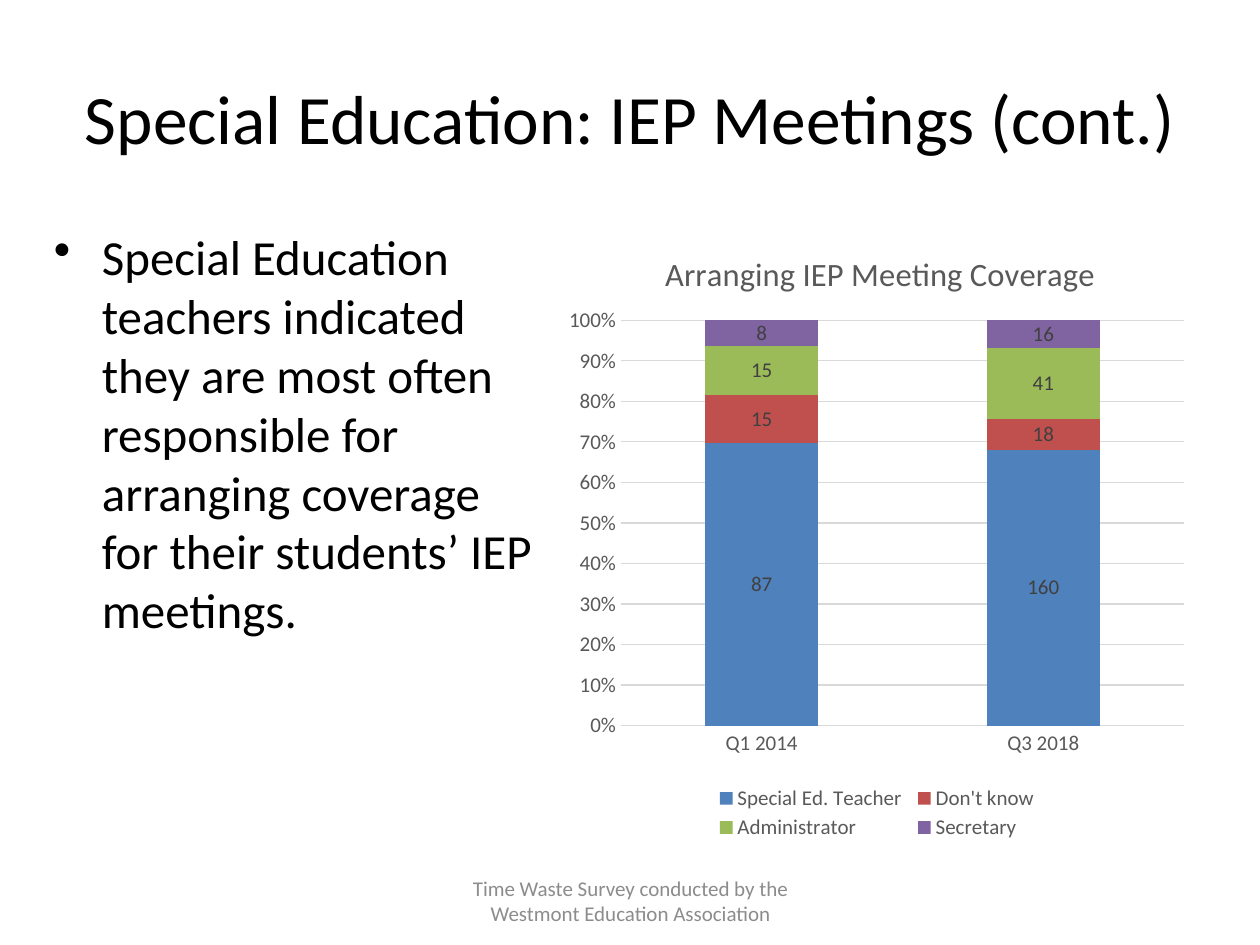
from lxml import etree
from pptx import Presentation
from pptx.chart.data import CategoryChartData
from pptx.dml.color import RGBColor
from pptx.enum import chart as ch, text
from pptx.oxml import parse_xml
from pptx.oxml.ns import nsdecls, qn
from pptx.util import Inches, Pt

FONT = "Calibri"
BLACK = RGBColor(0x00, 0x00, 0x00)
FOOTER_GRAY = RGBColor(0x8C, 0x8C, 0x8C)
AXIS_GRAY = RGBColor(0x59, 0x59, 0x59)
LABEL_GRAY = RGBColor(0x40, 0x40, 0x40)
GRID_GRAY = RGBColor(0xD9, 0xD9, 0xD9)

CATEGORIES = ("Q1 2014", "Q3 2018")
SERIES = (
    ("Special Ed. Teacher", (87, 160), RGBColor(0x4F, 0x81, 0xBD)),
    ("Don't know", (15, 18), RGBColor(0xC0, 0x50, 0x4D)),
    ("Administrator", (15, 41), RGBColor(0x9B, 0xBB, 0x59)),
    ("Secretary", (8, 16), RGBColor(0x80, 0x64, 0xA2)),
)


def style_font(font, size, color):
    font.name, font.size, font.bold = FONT, Pt(size), False
    font.color.rgb = color


def add_text(s, box, words, size, color=BLACK, align=text.PP_ALIGN.CENTER,
             anchor=text.MSO_ANCHOR.MIDDLE):
    tf = s.shapes.add_textbox(*map(Inches, box)).text_frame
    tf.word_wrap = True
    tf.vertical_anchor = anchor
    p = tf.paragraphs[0]
    p.text, p.alignment = words, align
    style_font(p.font, size, color)
    return p


def add_bullet(s, box, words):
    p = add_text(s, box, words, 28, align=text.PP_ALIGN.LEFT,
                 anchor=text.MSO_ANCHOR.TOP)
    p.space_before = Pt(5.6)
    pPr = p._p.get_or_add_pPr()
    pPr.set("marL", str(Inches(0.38)))
    pPr.set("indent", str(-Inches(0.38)))
    bullet = parse_xml(f'<a:buChar {nsdecls("a")} char="•"/>')
    pPr.find(qn("a:spcBef")).addnext(bullet)


def set_layout(element, before, inner=False, **fractions):
    """Place a chart part by fractions of the chart; before is the preceding tag."""
    for old in element.findall(qn("c:layout")):
        element.remove(old)
    layout = etree.Element(qn("c:layout"))
    manual = etree.SubElement(layout, qn("c:manualLayout"))
    if inner:
        etree.SubElement(manual, qn("c:layoutTarget"), val="inner")
    for name in ("x", "y"):
        etree.SubElement(manual, qn(f"c:{name}Mode"), val="edge")
    for name, value in fractions.items():
        etree.SubElement(manual, qn(f"c:{name}"), val=str(value))
    if before:
        element.find(qn(before)).addnext(layout)
    else:
        element.insert(0, layout)


def add_coverage_chart(s, box):
    data = CategoryChartData()
    data.categories = CATEGORIES
    for name, values, _ in SERIES:
        data.add_series(name, values)
    chart = s.shapes.add_chart(ch.XL_CHART_TYPE.COLUMN_STACKED_100,
                               *map(Inches, box), data).chart
    style_font(chart.font, 10, BLACK)

    # Title
    chart.has_title = True
    tf = chart.chart_title.text_frame
    tf.text = "Arranging IEP Meeting Coverage"
    style_font(tf.paragraphs[0].font, 18.6, AXIS_GRAY)
    chart.chart_title.include_in_layout = False

    # Stacked columns
    plot = chart.plots[0]
    plot.gap_width, plot.overlap = 150, 100
    plot.vary_by_categories = False
    for series, (_, _, color) in zip(plot.series, SERIES):
        series.format.fill.solid()
        series.format.fill.fore_color.rgb = color
        labels = series.data_labels
        labels.show_value = True
        style_font(labels.font, 12, LABEL_GRAY)

    # Axes
    for axis in (chart.category_axis, chart.value_axis):
        axis.major_tick_mark = axis.minor_tick_mark = ch.XL_TICK_MARK.NONE
        style_font(axis.tick_labels.font, 12, AXIS_GRAY)
    value_axis = chart.value_axis
    value_axis.maximum_scale, value_axis.major_unit = 1, 0.1
    value_axis.tick_labels.number_format = "0%"
    value_axis.tick_labels.number_format_is_linked = False
    value_axis.format.line.fill.background()
    for line in (chart.category_axis.format.line,
                 value_axis.major_gridlines.format.line):
        line.color.rgb, line.width = GRID_GRAY, Pt(0.75)

    # Legend
    chart.has_legend = True
    legend = chart.legend
    legend.position = ch.XL_LEGEND_POSITION.BOTTOM
    legend.include_in_layout = False
    style_font(legend.font, 12, AXIS_GRAY)

    # Positions inside the chart
    root = chart._chartSpace.chart
    set_layout(root.find(qn("c:title")), "c:tx", x=0.16, y=0.04)
    set_layout(root.plotArea, None, inner=True, x=0.1, y=0.16, w=0.88, h=0.65)
    set_layout(root.find(qn("c:legend")), "c:legendPos",
               x=0.24, y=0.9, w=0.52, h=0.1)


def main():
    prs = Presentation()
    prs.slide_width, prs.slide_height = Inches(10), Inches(7.5)
    s = prs.slides.add_slide(prs.slide_layouts[6])
    add_text(s, (0.5, 0.3, 9, 1.25),
             "Special Education: IEP Meetings (cont.)", 39.6)
    add_bullet(s, (0.33, 1.75, 4.08, 4.95),
               "Special Education teachers indicated they are most often "
               "responsible for arranging coverage for their students’ IEP "
               "meetings.")
    add_coverage_chart(s, (4.42, 1.75, 5.08, 4.95))
    add_text(s, (3.42, 6.95, 3.17, 0.4),
             "Time Waste Survey conducted by the Westmont Education Association",
             12, FOOTER_GRAY)
    prs.save("out.pptx")


if __name__ == "__main__":
    main()
